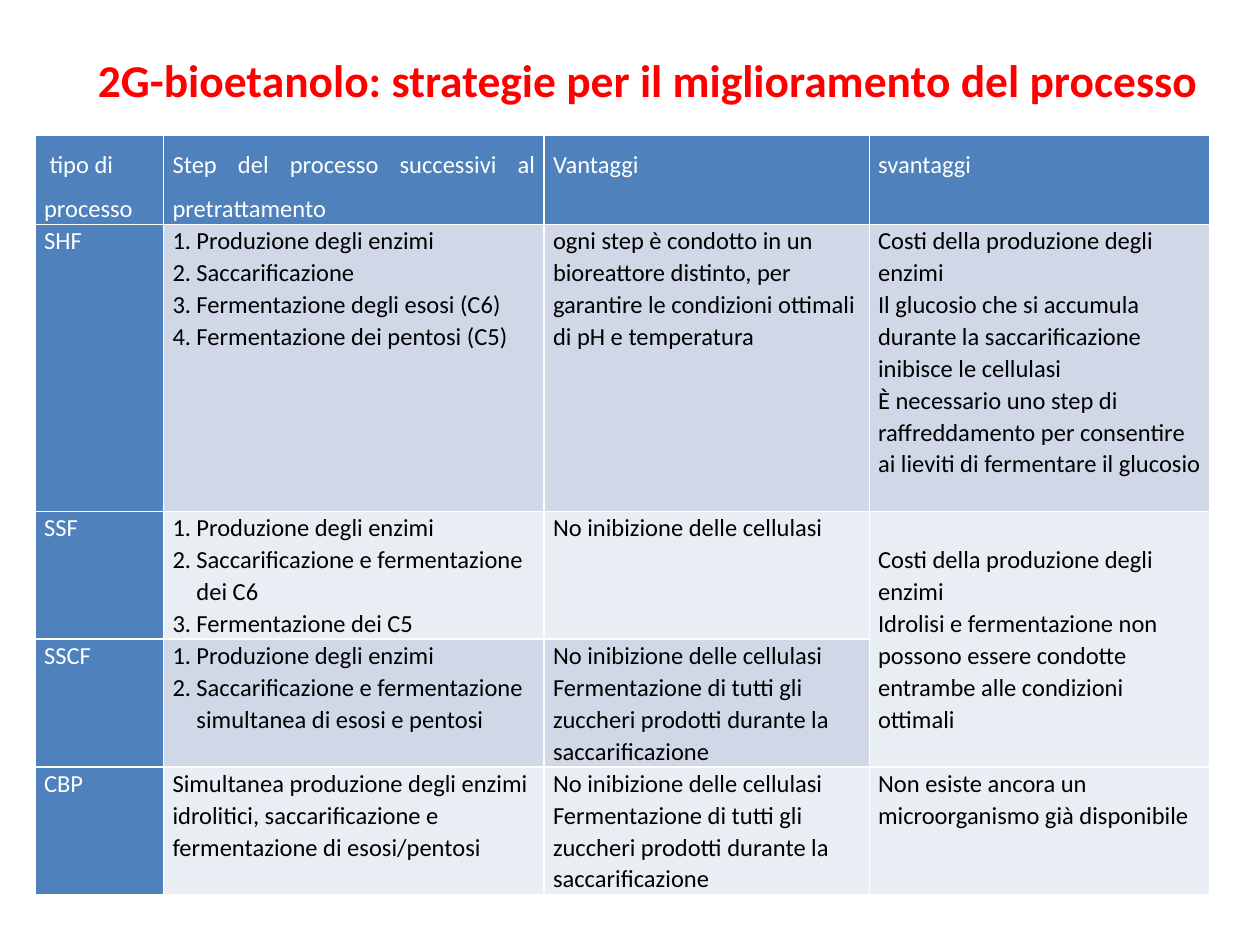
from dataclasses import dataclass

from pptx import Presentation
from pptx.dml.color import RGBColor
from pptx.enum.text import MSO_ANCHOR, PP_ALIGN
from pptx.oxml.ns import qn
from pptx.util import Inches, Pt
from lxml import etree

TOP, MIDDLE = MSO_ANCHOR.TOP, MSO_ANCHOR.MIDDLE
LEFT, CENTER, JUSTIFY = PP_ALIGN.LEFT, PP_ALIGN.CENTER, PP_ALIGN.JUSTIFY


@dataclass(frozen=True)
class Theme:
    font: str = "Calibri"
    title: float = 26
    body: float = 14
    red: str = "FF0000"
    blue: str = "4F81BD"
    white: str = "FFFFFF"
    black: str = "000000"
    bands: tuple = ("E9EDF4", "D0D8E8")


@dataclass(frozen=True)
class Entry:
    """Text of one cell and how it is set."""
    lines: tuple
    listed: bool = False
    anchor: MSO_ANCHOR = TOP
    span: int = 1


@dataclass(frozen=True)
class Method:
    """One process type: a row of the table."""
    name: str
    steps: Entry
    pros: Entry
    cons: Entry | None


THEME = Theme()
WIDTHS = (1.02, 3.02, 2.58, 2.7)
HEIGHTS = (0.71, 2.28, 1.01, 1.01, 1.01)
INDENT = 0.19
HEADS = (" tipo di processo", "Step del processo successivi al pretrattamento",
         "Vantaggi", "svantaggi")

ENZYMES = "Produzione degli enzimi"
COSTS = "Costi della produzione degli enzimi"
FREE = "No inibizione delle cellulasi"
SUGARS = Entry((FREE, "Fermentazione di tutti gli zuccheri prodotti durante "
                      "la saccarificazione"))

METHODS = (
    Method("SHF",
           Entry((ENZYMES, "Saccarificazione", "Fermentazione degli esosi (C6)",
                  "Fermentazione dei pentosi (C5)"), listed=True),
           Entry(("ogni step è condotto in un bioreattore distinto, per garantire "
                  "le condizioni ottimali di pH e temperatura",)),
           Entry((COSTS,
                  "Il glucosio che si accumula durante la saccarificazione "
                  "inibisce le cellulasi",
                  "È necessario uno step di raffreddamento per consentire ai "
                  "lieviti di fermentare il glucosio"))),
    Method("SSF",
           Entry((ENZYMES, "Saccarificazione e fermentazione dei C6",
                  "Fermentazione dei C5"), listed=True),
           Entry((FREE,)),
           Entry((COSTS,
                  "Idrolisi e fermentazione non possono essere condotte entrambe "
                  "alle condizioni ottimali"), anchor=MIDDLE, span=2)),
    Method("SSCF",
           Entry((ENZYMES, "Saccarificazione e fermentazione simultanea di esosi "
                           "e pentosi"), listed=True),
           SUGARS, None),
    Method("CBP",
           Entry(("Simultanea produzione degli enzimi idrolitici, "
                  "saccarificazione e fermentazione di esosi/pentosi",)),
           SUGARS,
           Entry(("Non esiste ancora un microorganismo già disponibile",))),
)


def add_run(para, text: str, size: float, color: str, bold: bool = False) -> None:
    run = para.add_run()
    run.text = text
    run.font.name = THEME.font
    run.font.size = Pt(size)
    run.font.bold = bold
    run.font.color.rgb = RGBColor.from_string(color)


def number(para) -> None:
    """Give a paragraph a hanging 1. 2. 3. number."""
    props = para._p.get_or_add_pPr()
    props.set("marL", str(Inches(INDENT)))
    props.set("indent", str(-Inches(INDENT)))
    etree.SubElement(props, qn("a:buFont"), typeface="+mj-lt")
    etree.SubElement(props, qn("a:buAutoNum"), type="arabicPeriod")


def fill_cell(cell, entry: Entry, fill: str, color: str,
              align: PP_ALIGN = LEFT, space: float = 1.07) -> None:
    cell.fill.solid()
    cell.fill.fore_color.rgb = RGBColor.from_string(fill)
    cell.margin_left = cell.margin_right = Inches(0.07)
    cell.margin_top = cell.margin_bottom = 0
    cell.vertical_anchor = entry.anchor
    frame = cell.text_frame
    for i, line in enumerate(entry.lines):
        para = frame.add_paragraph() if i else frame.paragraphs[0]
        para.alignment = align
        para.line_spacing = space
        if entry.listed:
            number(para)
        add_run(para, line, THEME.body, color)


def add_title(slide) -> None:
    title = slide.shapes.title
    title.left, title.top = Inches(0.39), Inches(0.36)
    title.width, title.height = Inches(9.51), Inches(0.54)
    para = title.text_frame.paragraphs[0]
    para.alignment = CENTER
    add_run(para, " 2G-bioetanolo: strategie per il miglioramento del processo ",
            THEME.title, THEME.red, bold=True)


def add_grid(slide) -> None:
    table = slide.shapes.add_table(
        len(HEIGHTS), len(WIDTHS), Inches(0.28), Inches(1.07),
        Inches(sum(WIDTHS)), Inches(sum(HEIGHTS))).table
    table.first_row = False
    for col, width in zip(table.columns, WIDTHS):
        col.width = Inches(width)
    for row, height in zip(table.rows, HEIGHTS):
        row.height = Inches(height)

    # Header row
    for c, head in enumerate(HEADS):
        fill_cell(table.cell(0, c), Entry((head,)), THEME.blue, THEME.white,
                  JUSTIFY if c else LEFT, 1.5)

    # One row per process type, in alternating bands
    for r, method in enumerate(METHODS, 1):
        fill_cell(table.cell(r, 0), Entry((method.name,)), THEME.blue, THEME.white)
        for c, entry in enumerate((method.steps, method.pros, method.cons), 1):
            if entry is None:
                continue
            cell = table.cell(r, c)
            if entry.span > 1:
                cell.merge(table.cell(r + entry.span - 1, c))
            fill_cell(cell, entry, THEME.bands[r % 2], THEME.black)


def main() -> None:
    deck = Presentation()
    deck.slide_width, deck.slide_height = Inches(10), Inches(7.5)
    slide = deck.slides.add_slide(deck.slide_layouts[5])
    add_title(slide)
    add_grid(slide)
    deck.save("out.pptx")


if __name__ == "__main__":
    main()
